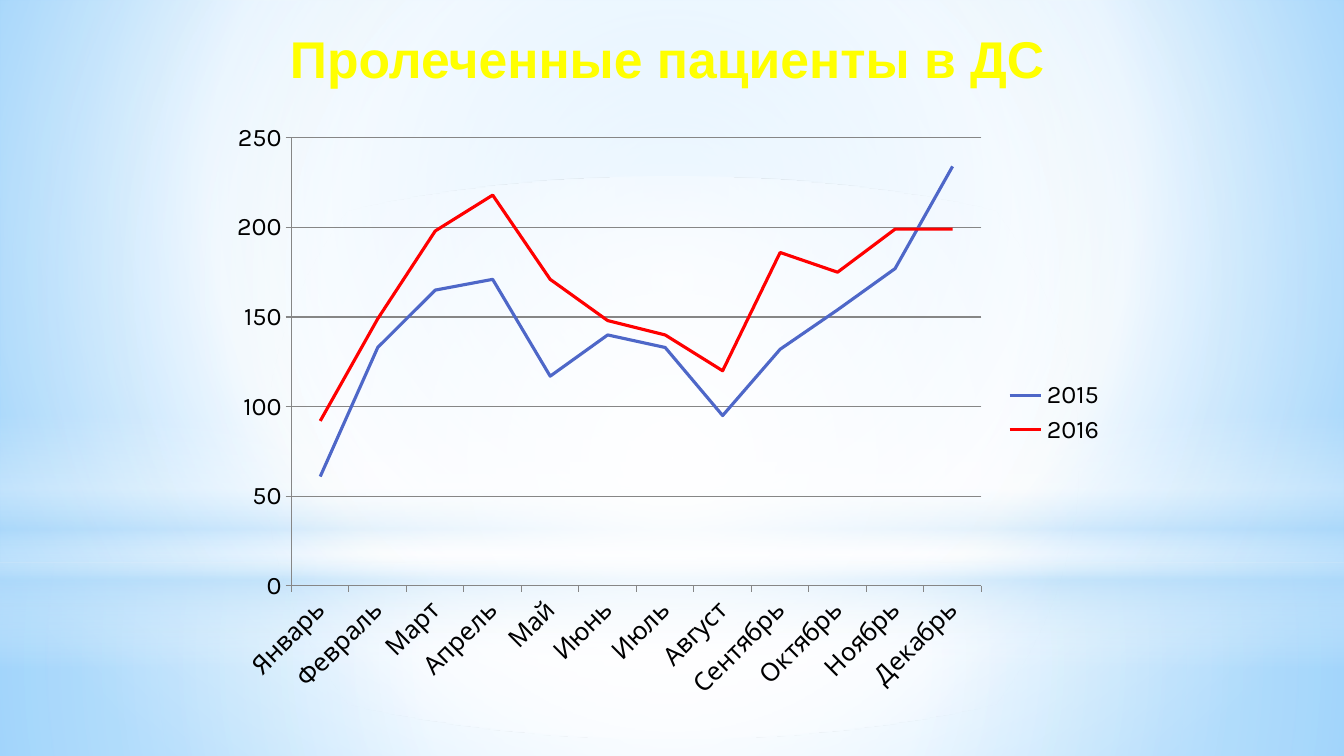
from dataclasses import dataclass

from lxml import etree
from pptx import Presentation
from pptx.chart.data import CategoryChartData
from pptx.dml.color import RGBColor
from pptx.enum.chart import XL_CHART_TYPE as Kind, XL_LEGEND_POSITION as Side
from pptx.enum.chart import XL_MARKER_STYLE as Mark, XL_TICK_MARK as Tick
from pptx.enum.shapes import MSO_SHAPE as Form
from pptx.enum.text import MSO_ANCHOR as Anchor, PP_ALIGN as Align
from pptx.oxml import parse_xml
from pptx.oxml.ns import nsdecls, qn
from pptx.util import Cm, Pt

WIDE = 33.87
HIGH = 19.05
MONTHS = ["Январь", "Февраль", "Март", "Апрель", "Май", "Июнь", "Июль",
          "Август", "Сентябрь", "Октябрь", "Ноябрь", "Декабрь"]


@dataclass
class Stop:
    place: int
    hue: str
    cover: int = 100


@dataclass
class Blend:
    stops: list[Stop]
    focus: tuple[int, int, int, int] | None = None  # None: top to bottom


@dataclass
class Glow:
    form: Form
    top: float
    high: float
    blend: Blend


@dataclass
class Year:
    name: str
    hue: str
    counts: list[int]


SKY = Blend([Stop(0, "9ED5FF"), Stop(60, "FFFFFF"), Stop(100, "5BB9FF")],
            (20, 10, 20, 60))
MID = (50, 50, 50, 50)
GLOWS = [
    Glow(Form.RECTANGLE, 14.17, 4.88, Blend(
        [Stop(0, "FFFFFF", 91), Stop(37, "FFFFFF", 76),
         Stop(100, "B4DCFA", 79)], MID)),
    Glow(Form.RECTANGLE, 0, 14.17, Blend(
        [Stop(0, "FFFFFF", 89), Stop(48, "FFFFFF", 62),
         Stop(100, "B4DCFA", 79)], MID)),
    Glow(Form.RECTANGLE, 10.46, 6.35, Blend(
        [Stop(0, "FFFFFF", 0), Stop(29, "FFFFFF", 30), Stop(45, "B4DCFA", 40),
         Stop(55, "FFFFFF", 26), Stop(65, "B4DCFA", 60),
         Stop(100, "FFFFFF", 0)])),
    Glow(Form.OVAL, 4.45, 14.17, Blend(
        [Stop(0, "FFFFFF"), Stop(56, "FFFFFF", 0)], MID)),
]
YEARS = [
    Year("2015", "4E67C8",
         [61, 133, 165, 171, 117, 140, 133, 95, 132, 154, 177, 234]),
    Year("2016", "FF0000",
         [92, 149, 198, 218, 171, 148, 140, 120, 186, 175, 199, 199]),
]


def color(code: str) -> RGBColor:
    return RGBColor.from_string(code)


def shade(fill, root, blend: Blend) -> None:
    """Swap a solid fill below root for a gradient."""
    fill.solid()
    fill.fore_color.rgb = color("FFFFFF")
    stops = "".join(
        f'<a:gs pos="{stop.place * 1000}"><a:srgbClr val="{stop.hue}">'
        f'<a:alpha val="{stop.cover * 1000}"/></a:srgbClr></a:gs>'
        for stop in blend.stops)
    if blend.focus:
        sides = " ".join(f'{side}="{part * 1000}"'
                         for side, part in zip("ltrb", blend.focus))
        way = f'<a:path path="circle"><a:fillToRect {sides}/></a:path>'
    else:
        way = '<a:lin ang="5400000" scaled="0"/>'
    plain = next(root.iter(qn("a:solidFill")))
    plain.getparent().replace(plain, parse_xml(
        f'<a:gradFill {nsdecls("a")} rotWithShape="1">'
        f'<a:gsLst>{stops}</a:gsLst>{way}</a:gradFill>'))


def add_glow(slide, glow: Glow) -> None:
    shape = slide.shapes.add_shape(
        glow.form, Cm(0), Cm(glow.top), Cm(WIDE), Cm(glow.high))
    shape.shadow.inherit = False
    shape.line.fill.background()
    shade(shape.fill, shape.element.spPr, glow.blend)


def place_plot(area) -> None:
    """Fix the inner plot area as shares of the chart."""
    for old in area.findall(qn("c:layout")):
        area.remove(old)
    layout = etree.Element(qn("c:layout"))
    manual = etree.SubElement(layout, qn("c:manualLayout"))
    for tag, val in [("layoutTarget", "inner"), ("xMode", "edge"),
                     ("yMode", "edge"), ("x", "0.08"), ("y", "0.04"),
                     ("w", "0.77"), ("h", "0.75")]:
        etree.SubElement(manual, qn(f"c:{tag}")).set("val", val)
    area.insert(0, layout)


def add_graph(slide) -> None:
    data = CategoryChartData()
    data.categories = MONTHS
    for year in YEARS:
        data.add_series(year.name, year.counts)
    chart = slide.shapes.add_chart(
        Kind.LINE, Cm(5.54), Cm(2.87), Cm(22.58), Cm(15.06), data).chart
    chart.has_title = False
    chart.font.name = "Karla"
    chart.font.size = Pt(18)
    chart.font.color.rgb = color("000000")
    area = next(chart.element.iter(qn("c:plotArea")))
    place_plot(area)

    # Legend
    chart.has_legend = True
    chart.legend.position = Side.RIGHT
    chart.legend.include_in_layout = False

    # Axes
    months, counts = chart.category_axis, chart.value_axis
    counts.minimum_scale, counts.maximum_scale = 0, 250
    counts.major_unit = 50
    counts.has_major_gridlines = True
    for axis in (months, counts):
        axis.major_tick_mark = Tick.OUTSIDE
        axis.minor_tick_mark = Tick.NONE
    for line in (months.format.line, counts.format.line,
                 counts.major_gridlines.format.line):
        line.color.rgb = color("868686")
        line.width = Pt(0.75)
    months.tick_labels.font.size = Pt(18)
    body = area.find(f"{qn('c:catAx')}/{qn('c:txPr')}/{qn('a:bodyPr')}")
    body.set("rot", str(-45 * 60000))

    # Series
    plot = chart.plots[0]
    plot.vary_by_categories = False
    for row, year in zip(plot.series, YEARS):
        row.smooth = False
        row.marker.style = Mark.NONE
        row.format.line.color.rgb = color(year.hue)
        row.format.line.width = Pt(2.25)


def add_title(slide) -> None:
    frame = slide.shapes.add_textbox(
        Cm(2.46), Cm(0.81), Cm(28.73), Cm(1.57)).text_frame
    frame.text = "Пролеченные пациенты в ДС"
    frame.word_wrap = True
    frame.vertical_anchor = Anchor.MIDDLE
    line = frame.paragraphs[0]
    line.alignment = Align.CENTER
    line.line_spacing = 0.8
    font = line.runs[0].font
    font.name = "Arial"
    font.size = Pt(36.9)
    font.bold = True
    font.color.rgb = color("FFFF00")


def main() -> None:
    deck = Presentation()
    deck.slide_width, deck.slide_height = Cm(WIDE), Cm(HIGH)
    slide = deck.slides.add_slide(deck.slide_layouts[6])

    # Backdrop
    shade(slide.background.fill, slide.element, SKY)
    for glow in GLOWS:
        add_glow(slide, glow)

    # Content
    add_graph(slide)
    add_title(slide)
    deck.save("out.pptx")


if __name__ == "__main__":
    main()
